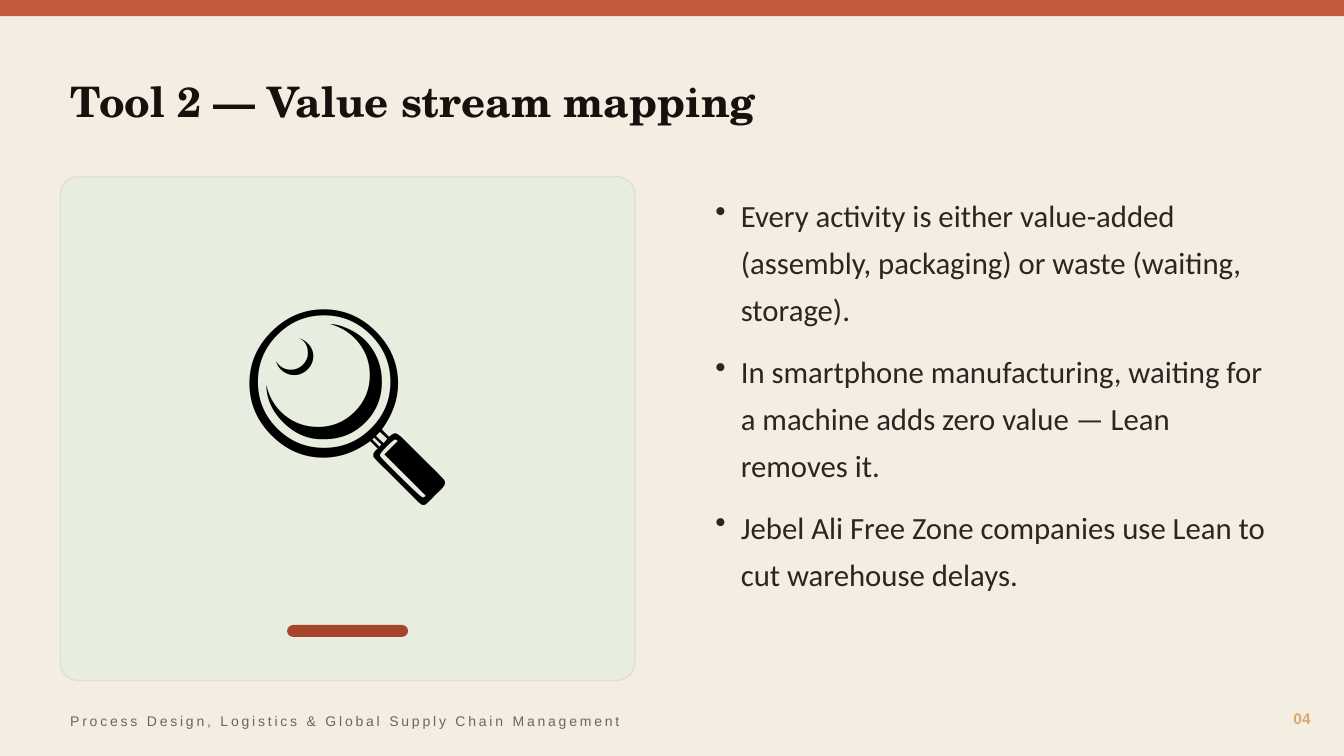
from lxml import etree
from pptx import Presentation
from pptx.dml.color import RGBColor
from pptx.enum.shapes import MSO_SHAPE
from pptx.enum.text import MSO_ANCHOR, MSO_AUTO_SIZE, PP_ALIGN
from pptx.oxml.ns import qn
from pptx.util import Cm, Pt

RECTANGLE, ROUNDED = MSO_SHAPE.RECTANGLE, MSO_SHAPE.ROUNDED_RECTANGLE
TOP, MIDDLE = MSO_ANCHOR.TOP, MSO_ANCHOR.MIDDLE
LEFT, CENTER, RIGHT = PP_ALIGN.LEFT, PP_ALIGN.CENTER, PP_ALIGN.RIGHT
NO_AUTOFIT = MSO_AUTO_SIZE.NONE

CREAM = RGBColor(0xF4, 0xED, 0xE2)
TERRACOTTA = RGBColor(0xC4, 0x5A, 0x3D)
RUST = RGBColor(0xA4, 0x45, 0x2C)
SAGE = RGBColor(0xE8, 0xEE, 0xDF)
SAND = RGBColor(0xE4, 0xDD, 0xD0)
INK = RGBColor(0x16, 0x11, 0x0D)
CHARCOAL = RGBColor(0x2A, 0x26, 0x22)
TAUPE = RGBColor(0x6E, 0x66, 0x5C)
GOLD = RGBColor(0xD9, 0xA8, 0x6C)
BLACK = RGBColor(0, 0, 0)

SLIDE_WIDTH, SLIDE_HEIGHT = Cm(33.87), Cm(19.05)
MARGIN = Cm(1.52)
CARD_TOP = Cm(4.45)
COLUMN_WIDTH = Cm(14.48)
ACCENT_WIDTH = Cm(3.05)

POINTS = [
    "Every activity is either value-added (assembly, packaging) or waste (waiting, storage).",
    "In smartphone manufacturing, waiting for a machine adds zero value — Lean removes it.",
    "Jebel Ali Free Zone companies use Lean to cut warehouse delays.",
]


def place(shape, left, top, width, height):
    shape.left, shape.top, shape.width, shape.height = left, top, width, height


def format_text(frame, font_name, size, color, bold=False, align=LEFT, anchor=MIDDLE):
    frame.word_wrap = True
    frame.auto_size = NO_AUTOFIT
    frame.vertical_anchor = anchor
    for paragraph in frame.paragraphs:
        paragraph.alignment = align
        for run in paragraph.runs:
            run.font.name = font_name
            run.font.size = Pt(size)
            run.font.bold = bold
            run.font.color.rgb = color


def add_panel(slide, kind, left, top, width, height, fill, outline=None, radius=None):
    panel = slide.shapes.add_shape(kind, left, top, width, height)
    panel.shadow.inherit = False
    panel.fill.solid()
    panel.fill.fore_color.rgb = fill
    if outline is None:
        panel.line.fill.background()
    else:
        panel.line.color.rgb = outline
        panel.line.width = Pt(1)
    if radius is not None:
        panel.adjustments[0] = radius


def add_text(slide, text, left, top, width, height, *style, **options):
    frame = slide.shapes.add_textbox(left, top, width, height).text_frame
    frame.text = text
    format_text(frame, *style, **options)
    return frame


def add_title(slide, text):
    title = slide.shapes.title
    place(title, MARGIN, Cm(1.27), Cm(30.73), Cm(2.54))
    title.text_frame.text = text
    format_text(title.text_frame, "TeX Gyre Schola", 30, INK, bold=True)


def add_bullets(slide, points, left, top, width, height):
    frame = add_text(slide, "\n".join(points), left, top, width, height,
                     "Calibri", 22, CHARCOAL, anchor=TOP)
    for paragraph in frame.paragraphs:
        properties = paragraph._p.get_or_add_pPr()
        properties.set("marL", str(Cm(0.64)))
        properties.set("indent", str(-Cm(0.64)))
        etree.SubElement(properties, qn("a:buChar")).set("char", "•")
        paragraph.line_spacing = 1.28
        paragraph.space_after = Pt(10)


def add_footer(slide, text, page):
    footer = add_text(slide, text, MARGIN, Cm(17.78), Cm(20.32), Cm(0.76),
                      "Arial", 10, TAUPE)
    footer.paragraphs[0].runs[0].font._element.set("spc", "200")
    add_text(slide, page, Cm(30.99), Cm(17.65), Cm(2.29), Cm(0.89),
             "Arial", 11, GOLD, bold=True, align=RIGHT)


def main():
    deck = Presentation()
    deck.slide_width, deck.slide_height = SLIDE_WIDTH, SLIDE_HEIGHT
    slide = deck.slides.add_slide(deck.slide_layouts[5])
    slide.background.fill.solid()
    slide.background.fill.fore_color.rgb = CREAM

    add_panel(slide, RECTANGLE, 0, 0, SLIDE_WIDTH, Cm(0.41), TERRACOTTA)
    add_title(slide, "Tool 2 — Value stream mapping")

    add_panel(slide, ROUNDED, MARGIN, CARD_TOP, COLUMN_WIDTH, Cm(12.7),
              SAGE, outline=SAND, radius=0.036)
    add_text(slide, "🔍", MARGIN, CARD_TOP, COLUMN_WIDTH, Cm(10.41),
             "Calibri", 150, BLACK, align=CENTER)
    accent_left = MARGIN + (COLUMN_WIDTH - ACCENT_WIDTH) // 2
    add_panel(slide, ROUNDED, accent_left, Cm(15.75), ACCENT_WIDTH, Cm(0.3),
              RUST, radius=0.5)

    add_bullets(slide, POINTS, Cm(17.78), Cm(4.57), COLUMN_WIDTH, Cm(12.7))
    add_footer(slide, "Process Design, Logistics & Global Supply Chain Management", "04")
    deck.save("out.pptx")


if __name__ == "__main__":
    main()
